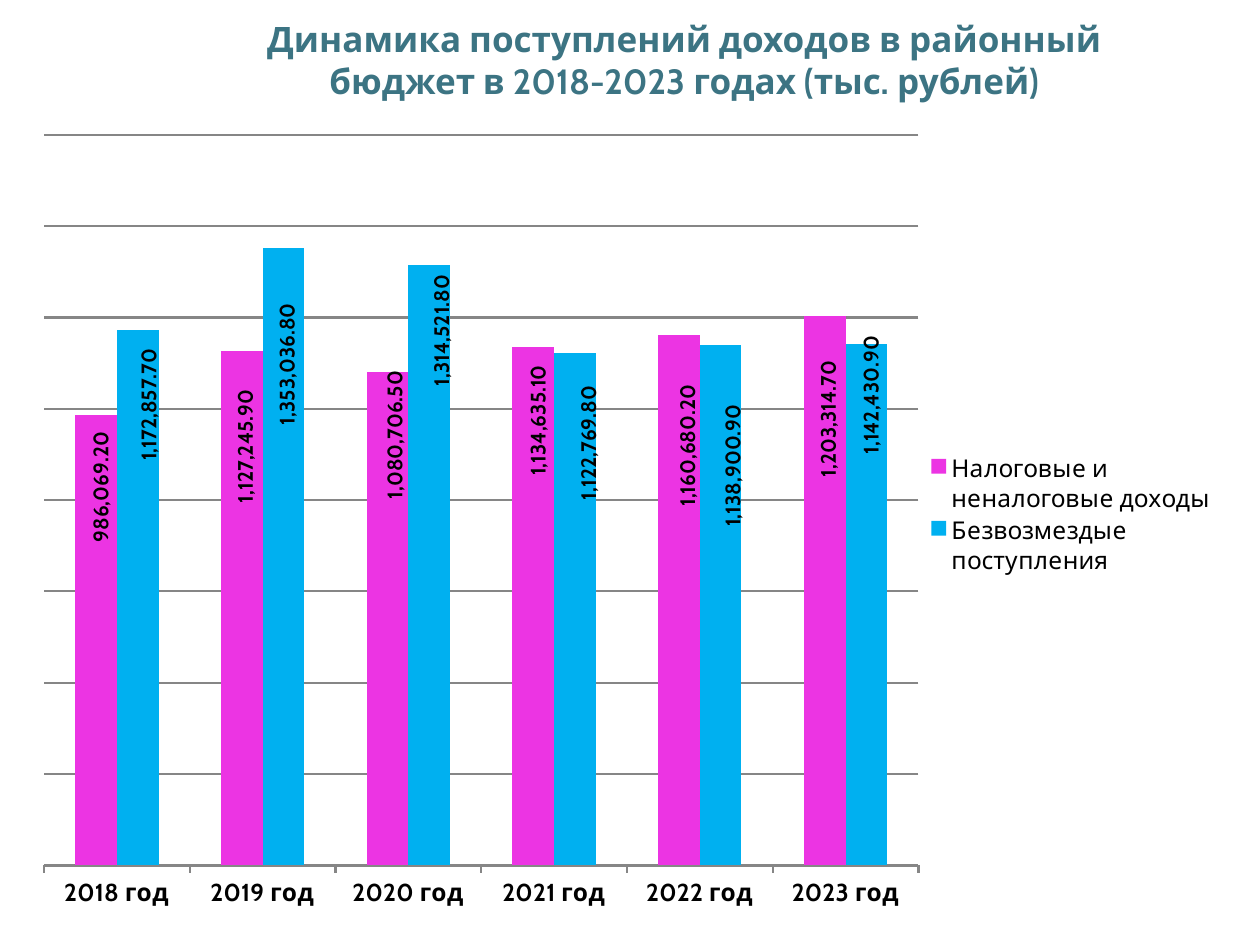
"""Build the slide on district budget revenues for 2018-2023."""
import dataclasses

import lxml.etree
import pptx
import pptx.chart.chart
import pptx.chart.data
import pptx.chart.series
import pptx.dml.color
import pptx.enum.chart
import pptx.enum.text
import pptx.oxml.ns
import pptx.slide
import pptx.text.text
import pptx.util

FONT = "Cabin"
NUMBER_FORMAT = "#,##0.00"
YEARS = range(2018, 2024)
CHART_LEFT, CHART_TOP, CHART_WIDTH, CHART_HEIGHT = 0.2, 0.92, 9.53, 6.38
PLOT_BOUNDS = (0.15, 0.15, 6.94, 5.8)
LEGEND_BOUNDS = (7.1, 2.67, 2.4, 1.0)
LABEL_EXTENSION = "{CE6537A1-D6FC-4f65-9D91-7224C49458BB}"
LABEL_NAMESPACE = "http://schemas.microsoft.com/office/drawing/2012/chart"


@dataclasses.dataclass
class Revenue:
    name: str
    color: str
    values: list[float]
    label_shifts: list[tuple[float, float]]


REVENUES = [
    Revenue(
        "Налоговые и неналоговые доходы", "EC34E3",
        [986069.2, 1127245.9, 1080706.5, 1134635.1, 1160680.2, 1203314.7],
        [(0.04, 1.05), (0.03, 1.25), (0.06, 1.05), (0.04, 1.06), (0.07, 1.4), (0.03, 1.32)],
    ),
    Revenue(
        "Безвозмездые поступления", "00B0F0",
        [1172857.7, 1353036.8, 1314521.8, 1122769.8, 1138900.9, 1142430.9],
        [(0.09, 1.08), (0.03, 1.45), (0.1, 1.0), (0.11, 1.21), (0.1, 1.48), (0.04, 0.92)],
    ),
]


def rgb(color: str) -> pptx.dml.color.RGBColor:
    return pptx.dml.color.RGBColor.from_string(color)


def format_font(font: pptx.text.text.Font, size: float, color: str = "000000", bold: bool = False) -> None:
    font.name = FONT
    font.size = pptx.util.Pt(size)
    font.bold = bold
    font.color.rgb = rgb(color)


def write_text(frame: pptx.text.text.TextFrame, text: str, *, size: float, color: str, bold: bool) -> None:
    frame.word_wrap = True
    frame.auto_size = pptx.enum.text.MSO_AUTO_SIZE.NONE
    frame.vertical_anchor = pptx.enum.text.MSO_ANCHOR.MIDDLE
    para = frame.paragraphs[0]
    para.alignment = pptx.enum.text.PP_ALIGN.CENTER
    span = para.add_run()
    span.text = text
    format_font(span.font, size, color, bold)


def chart_element(tag: str, **attributes: str) -> lxml.etree._Element:
    return lxml.etree.Element(pptx.oxml.ns.qn(f"c:{tag}"), attributes)


def manual_layout(**settings: object) -> lxml.etree._Element:
    layout = chart_element("layout")
    manual = chart_element("manualLayout")
    layout.append(manual)
    for tag, value in settings.items():
        manual.append(chart_element(tag, val=str(value)))
    return layout


def place_part(
    chart: pptx.chart.chart.Chart, tag: str, position: int,
    bounds: tuple[float, float, float, float], **settings: str,
) -> None:
    part = chart.element.find(".//" + pptx.oxml.ns.qn(f"c:{tag}"))
    for old in part.findall(pptx.oxml.ns.qn("c:layout")):
        part.remove(old)
    left, top, width, height = bounds
    part.insert(position, manual_layout(
        **settings, xMode="edge", yMode="edge",
        x=left / CHART_WIDTH, y=top / CHART_HEIGHT,
        w=width / CHART_WIDTH, h=height / CHART_HEIGHT,
    ))


def hide_leader_lines(labels: lxml.etree._Element) -> None:
    for line in labels.findall(pptx.oxml.ns.qn("c:showLeaderLines")):
        line.set("val", "0")
    extensions = chart_element("extLst")
    extension = chart_element("ext", uri=LABEL_EXTENSION)
    extension.append(lxml.etree.Element(
        f"{{{LABEL_NAMESPACE}}}showLeaderLines", {"val": "0"}, nsmap={"c15": LABEL_NAMESPACE}
    ))
    extensions.append(extension)
    labels.append(extensions)


def label_bars(series: pptx.chart.series.BarSeries, revenue: Revenue) -> None:
    labels = series.data_labels
    labels.show_value = True
    labels.number_format = NUMBER_FORMAT
    labels.number_format_is_linked = False
    format_font(labels.font, 12, bold=True)
    for index in range(len(revenue.values)):
        label = series.points[index].data_label
        format_font(label.font, 12, bold=True)
        label.position = pptx.enum.chart.XL_LABEL_POSITION.OUTSIDE_END
    node = labels._element
    for body in node.iter(pptx.oxml.ns.qn("a:bodyPr")):
        body.set("rot", "-5400000")
        body.set("vert", "horz")
    for item, (right, down) in zip(node.findall(pptx.oxml.ns.qn("c:dLbl")), revenue.label_shifts):
        item.insert(1, manual_layout(x=right / CHART_WIDTH, y=down / CHART_HEIGHT))
        item.insert(2, chart_element("numFmt", formatCode=NUMBER_FORMAT, sourceLinked="0"))
    hide_leader_lines(node)


def format_axes(chart: pptx.chart.chart.Chart) -> None:
    years, amounts = chart.category_axis, chart.value_axis
    years.major_tick_mark = pptx.enum.chart.XL_TICK_MARK.OUTSIDE
    format_font(years.tick_labels.font, 14, bold=True)
    amounts.minimum_scale, amounts.maximum_scale, amounts.major_unit = 0, 1600000, 200000
    amounts.tick_labels.number_format = NUMBER_FORMAT
    amounts.tick_labels.number_format_is_linked = False
    amounts.has_major_gridlines = True
    amounts.visible = False
    for line in (years.format.line, amounts.major_gridlines.format.line):
        line.color.rgb = rgb("868686")
        line.width = pptx.util.Pt(1.25)


def draw_chart(page: pptx.slide.Slide) -> None:
    data = pptx.chart.data.CategoryChartData(number_format=NUMBER_FORMAT)
    data.categories = [f"{year} год" for year in YEARS]
    for revenue in REVENUES:
        data.add_series(revenue.name, revenue.values)
    bounds = map(pptx.util.Inches, (CHART_LEFT, CHART_TOP, CHART_WIDTH, CHART_HEIGHT))
    chart = page.shapes.add_chart(
        pptx.enum.chart.XL_CHART_TYPE.COLUMN_CLUSTERED, *bounds, data
    ).chart
    format_font(chart.font, 18)
    chart.has_title = False
    chart.has_legend = True
    chart.legend.position = pptx.enum.chart.XL_LEGEND_POSITION.RIGHT
    chart.legend.include_in_layout = False
    format_font(chart.legend.font, 14)
    plot = chart.plots[0]
    plot.gap_width, plot.overlap, plot.vary_by_categories = 150, 0, False
    format_axes(chart)
    place_part(chart, "plotArea", 0, PLOT_BOUNDS, layoutTarget="inner")
    place_part(chart, "legend", 1, LEGEND_BOUNDS)
    for series, revenue in zip(plot.series, REVENUES):
        series.format.fill.solid()
        series.format.fill.fore_color.rgb = rgb(revenue.color)
        label_bars(series, revenue)


def main() -> None:
    deck = pptx.Presentation()
    deck.slide_width, deck.slide_height = pptx.util.Inches(10), pptx.util.Inches(7.5)
    page = deck.slides.add_slide(deck.slide_layouts.get_by_name("Title Only"))
    draw_chart(page)
    title = page.shapes.title
    title.left, title.top, title.width, title.height = map(pptx.util.Inches, (1.77, 0.28, 7.32, 0.39))
    write_text(
        title.text_frame, "Динамика поступлений доходов в районный бюджет в 2018-2023 годах (тыс. рублей)",
        size=20, color="3C7483", bold=True,
    )
    deck.save("out.pptx")


if __name__ == "__main__":
    main()
